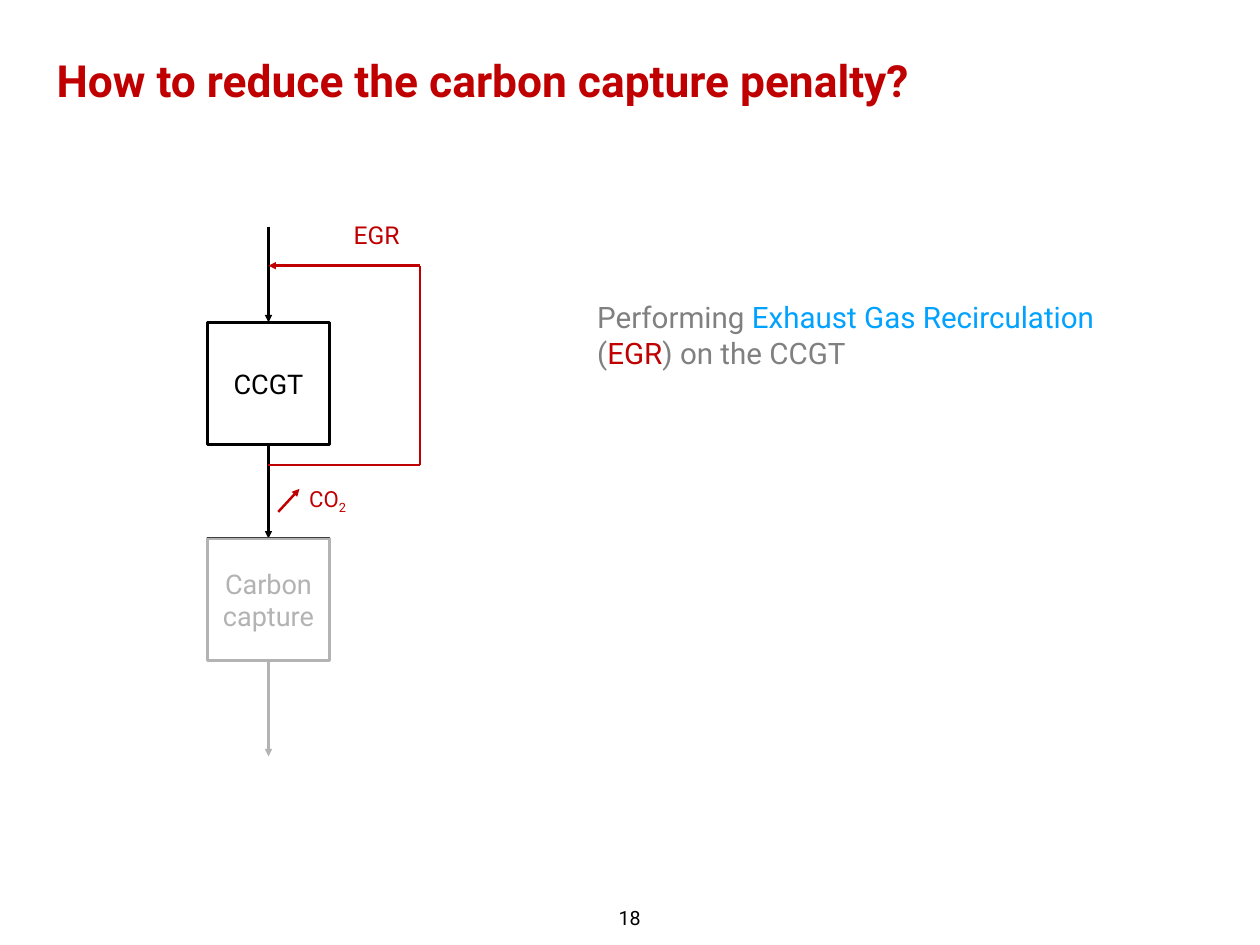
from dataclasses import dataclass
from typing import NamedTuple

from lxml import etree
from pptx import Presentation, util as u
from pptx.dml.color import RGBColor
from pptx.enum import shapes, text
from pptx.oxml import ns


@dataclass(frozen=True)
class Theme:
    font: str = "Roboto"
    red: str = "C00000"
    black: str = "000000"
    gray: str = "808080"
    blue: str = "00A2FF"
    white: str = "FFFFFF"
    title_size: int = 36
    body_size: int = 24
    box_size: int = 22
    egr_size: int = 20
    co2_size: int = 18
    page_size: int = 16
    line_width: int = 2


class Frame(NamedTuple):
    left: int
    top: int
    width: int
    height: int


class Span(NamedTuple):
    words: str
    color: str
    subscript: bool = False


class Label(NamedTuple):
    frame: Frame
    size: int
    spans: list[Span]
    bold: bool = False
    wrap: bool = False
    align: text.PP_ALIGN = text.PP_ALIGN.LEFT
    anchor: text.MSO_ANCHOR = text.MSO_ANCHOR.MIDDLE


class Stroke(NamedTuple):
    start: tuple[int, int]
    end: tuple[int, int]
    color: str
    arrow: bool = False


THEME = Theme()
INSET = 6
FLOW_X = 303    # axis of the process flow
BOX_SIDE = 138
LOOP_X = 474    # right side of the recirculation loop
LOOP_TOP, LOOP_BOTTOM = 300, 525
CENTER = text.PP_ALIGN.CENTER


def px(length: int) -> u.Emu:
    """One px is a hundredth of an inch."""
    return u.Emu(length * 9144)


def rgb(color: str) -> RGBColor:
    return RGBColor.from_string(color)


def write(shape, label: Label) -> None:
    frame = shape.text_frame
    frame.word_wrap = label.wrap
    frame.vertical_anchor = label.anchor
    frame.margin_left = frame.margin_right = px(INSET)
    frame.margin_top = frame.margin_bottom = px(INSET)
    paragraph = frame.paragraphs[0]
    paragraph.alignment = label.align
    for span in label.spans:
        run = paragraph.add_run()
        run.text = span.words
        run.font.name = THEME.font
        run.font.size = u.Pt(label.size)
        run.font.bold = label.bold
        run.font.color.rgb = rgb(span.color)
        if span.subscript:
            run.font._element.set("baseline", "-25000")


def add_label(slide, label: Label) -> None:
    write(slide.shapes.add_textbox(*map(px, label.frame)), label)


def add_rectangle(slide, frame: Frame):
    shape = slide.shapes.add_shape(shapes.MSO_SHAPE.RECTANGLE, *map(px, frame))
    shape.shadow.inherit = False
    return shape


def add_unit(slide, name: str, top: int):
    """A process unit centred on the flow axis."""
    frame = Frame(FLOW_X - BOX_SIDE // 2, top, BOX_SIDE, BOX_SIDE)
    shape = add_rectangle(slide, frame)
    shape.fill.background()
    shape.line.color.rgb = rgb(THEME.black)
    shape.line.width = u.Pt(THEME.line_width)
    write(shape, Label(frame, THEME.box_size, [Span(name, THEME.black)],
                       wrap=True, align=CENTER))
    return shape


def add_veil(slide, frame: Frame, opacity: int) -> None:
    """A see-through white sheet that fades what lies beneath."""
    veil = add_rectangle(slide, frame)
    veil.line.fill.background()
    veil.fill.solid()
    veil.fill.fore_color.rgb = rgb(THEME.white)
    color = veil._element.spPr.find(".//" + ns.qn("a:srgbClr"))
    etree.SubElement(color, ns.qn("a:alpha"), val=str(opacity * 1000))


def add_stroke(slide, stroke: Stroke):
    connector = slide.shapes.add_connector(
        shapes.MSO_CONNECTOR.STRAIGHT, *map(px, stroke.start + stroke.end))
    connector.line.color.rgb = rgb(stroke.color)
    connector.line.width = u.Pt(THEME.line_width)
    if stroke.arrow:
        etree.SubElement(connector.line._get_or_add_ln(), ns.qn("a:tailEnd"),
                         type="triangle")
    etree.SubElement(connector._element.spPr, ns.qn("a:effectLst"))
    return connector


def add_flow(slide) -> None:
    ccgt = add_unit(slide, "CCGT", 364)
    capture = add_unit(slide, "Carbon capture", 608)
    flows = [(256, 364, None, ccgt), (502, 608, ccgt, capture),
             (746, 854, capture, None)]
    for top, bottom, source, target in flows:
        arrow = add_stroke(slide, Stroke((FLOW_X, top), (FLOW_X, bottom),
                                         THEME.black, arrow=True))
        if source:
            arrow.begin_connect(source, 2)
        if target:
            arrow.end_connect(target, 0)


def main() -> None:
    presentation = Presentation()
    presentation.slide_width, presentation.slide_height = px(1422), px(1067)
    slide = presentation.slides.add_slide(presentation.slide_layouts[6])

    # Process flow, with the carbon capture part faded
    add_flow(slide)
    add_veil(slide, Frame(145, 607, 310, 308), opacity=70)

    # Recirculation loop and the sign of rising CO2
    for stroke in [
        Stroke((FLOW_X, LOOP_BOTTOM), (LOOP_X, LOOP_BOTTOM), THEME.red),
        Stroke((LOOP_X, LOOP_BOTTOM), (LOOP_X, LOOP_TOP), THEME.red),
        Stroke((LOOP_X, LOOP_TOP), (FLOW_X, LOOP_TOP), THEME.red, arrow=True),
        Stroke((314, 578), (338, 552), THEME.red, arrow=True),
    ]:
        add_stroke(slide, stroke)

    # Title, explanation, loop labels and page number
    for label in [
        Label(Frame(58, 54, 1252, 148), THEME.title_size,
              [Span("How to reduce the carbon capture penalty?", THEME.red)],
              bold=True, wrap=True, anchor=text.MSO_ANCHOR.TOP),
        Label(Frame(668, 332, 645, 92), THEME.body_size,
              [Span("Performing ", THEME.gray),
               Span("Exhaust Gas Recirculation ", THEME.blue),
               Span("(", THEME.gray), Span("EGR", THEME.red),
               Span(") on the CCGT", THEME.gray)], wrap=True),
        Label(Frame(389, 242, 72, 45), THEME.egr_size,
              [Span("EGR", THEME.red)], align=CENTER),
        Label(Frame(343, 544, 63, 42), THEME.co2_size,
              [Span("CO", THEME.red), Span("2", THEME.red, subscript=True)]),
        Label(Frame(692, 1017, 37, 35), THEME.page_size,
              [Span("18", THEME.black)], align=CENTER,
              anchor=text.MSO_ANCHOR.TOP),
    ]:
        add_label(slide, label)

    presentation.save("out.pptx")


if __name__ == "__main__":
    main()
